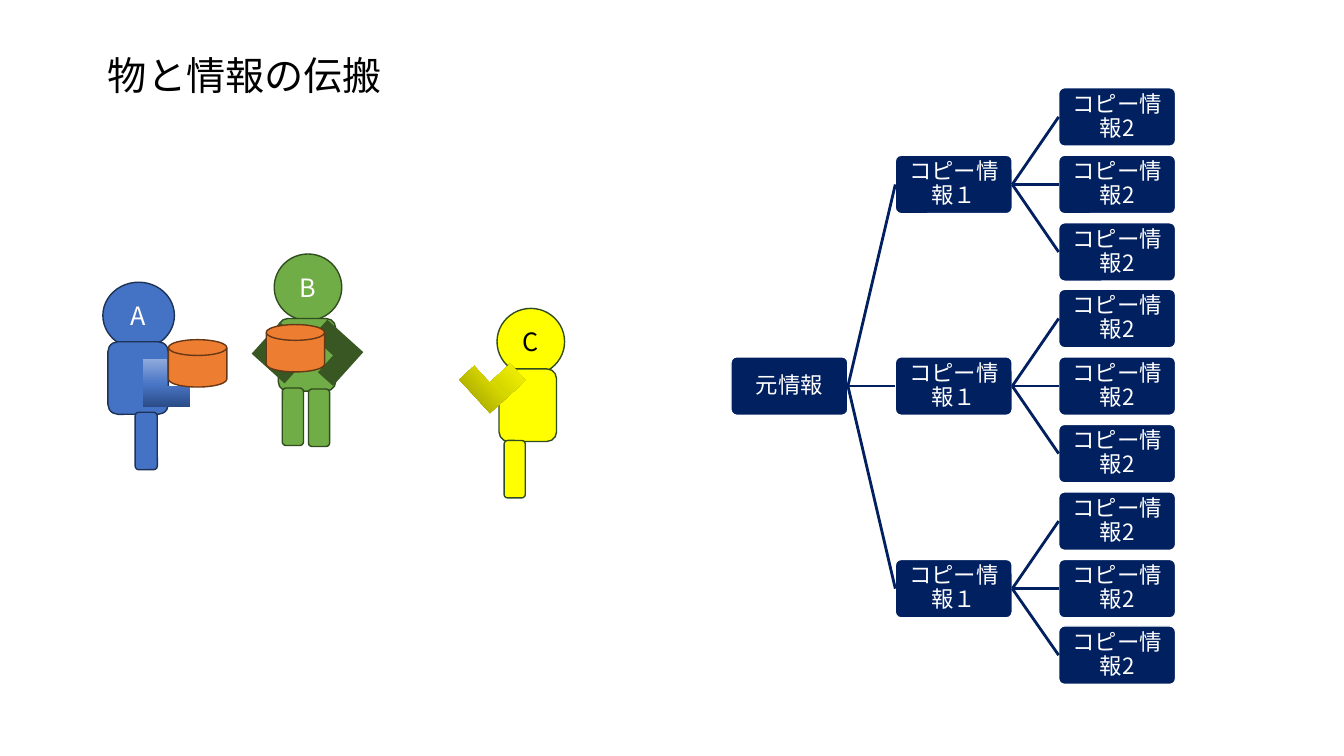
from dataclasses import dataclass

import lxml.etree
import pptx
import pptx.dml.color
import pptx.enum.shapes
import pptx.enum.text
import pptx.oxml
import pptx.oxml.ns
import pptx.shapes.autoshape
import pptx.slide
import pptx.text.text
import pptx.util

PX = 9144  # EMU per px, 100 px to the inch
FONT = "Noto Sans CJK JP"
COLORS = {
    "white": "FFFFFF", "black": "000000", "navy": "002060",
    "blue": "4472C4", "blue_edge": "1E3256",
    "green": "70AD47", "green_edge": "314C1F", "green_arm": "385723",
    "yellow": "FFFF00", "orange": "ED7D31", "orange_edge": "683715",
}
GRADIENTS = {
    "blue_arm": ((0, "2A4B86"), (48, "4A76C6"), (100, "8FAADC")),
    "yellow_arm": ((0, "979700"), (50, "D7D700"), (100, "FFFF00")),
}
KIND = pptx.enum.shapes.MSO_SHAPE
ALIGN = pptx.enum.text.PP_ALIGN
ANCHOR = pptx.enum.text.MSO_ANCHOR
Shape = pptx.shapes.autoshape.Shape


@dataclass(frozen=True)
class Part:
    kind: KIND
    box: tuple[int, int, int, int]
    fill: str
    edge: str = ""
    label: str = ""
    ink: str = "white"
    adjust: float | None = None
    turn: float = 0
    flip: str = ""


@dataclass(frozen=True)
class Level:
    label: str
    left: int
    count: int


def head(box: tuple[int, int, int, int], fill: str, edge: str, label: str, ink: str = "white") -> Part:
    return Part(KIND.OVAL, box, fill, edge, label, ink)


def limb(box: tuple[int, int, int, int], fill: str, edge: str) -> Part:
    return Part(KIND.ROUNDED_RECTANGLE, box, fill, edge)


def arm(box: tuple[int, int, int, int], fill: str, turn: float = 0, flip: str = "") -> Part:
    return Part(KIND.CORNER, box, fill, adjust=0.446, turn=turn, flip=flip)


def cargo(left: int, top: int) -> Part:
    return Part(KIND.FLOWCHART_MAGNETIC_DISK, (left, top, 58, 47), "orange", "orange_edge")


PEOPLE_AND_CARGO = (
    # Person B
    head((272, 252, 67, 66), "green", "green_edge", "B"),
    limb((276, 316, 57, 72), "green", "green_edge"),
    arm((305, 326, 45, 48), "green_arm", 312, "flipH"),
    limb((280, 385, 21, 57), "green", "green_edge"),
    arm((259, 328, 42, 44), "green_arm", 312, "flipV"),
    limb((306, 386, 21, 57), "green", "green_edge"),
    # Person A
    head((102, 280, 71, 66), "blue", "blue_edge", "A"),
    limb((107, 339, 60, 72), "blue", "blue_edge"),
    arm((142, 356, 47, 48), "blue_arm"),
    limb((134, 409, 22, 57), "blue", "blue_edge"),
    cargo(167, 337),
    # Person C
    head((493, 306, 67, 66), "yellow", "green_edge", "C", "black"),
    limb((495, 366, 57, 72), "yellow", "green_edge"),
    arm((466, 353, 45, 48), "yellow_arm", 47.5, "flipH"),
    limb((500, 437, 21, 57), "yellow", "green_edge"),
    cargo(264, 322),
)

LEVELS = (Level("元情報", 725, 1), Level("コピー情報１", 888, 3), Level("コピー情報2", 1050, 9))
LEAF_TOP, LEAF_PITCH = 87, 66.8
NODE_WIDTH, NODE_HEIGHT = 116, 58


def rgb(color: str) -> pptx.dml.color.RGBColor:
    return pptx.dml.color.RGBColor.from_string(COLORS[color])


def write(frame: pptx.text.text.TextFrame, text: str, size: int, color: str, align: ALIGN) -> None:
    frame.text = text
    frame.word_wrap = True
    paragraph = frame.paragraphs[0]
    paragraph.alignment = align
    for run in paragraph.runs:
        run.font.size = pptx.util.Pt(size)
        run.font.color.rgb = rgb(color)
        run.font.name = FONT
        east_asian = lxml.etree.SubElement(run.font._element, pptx.oxml.ns.qn("a:ea"))
        east_asian.set("typeface", FONT)


def fill_gradient(shape: Shape, stops: tuple[tuple[int, str], ...]) -> None:
    stop_xml = "".join(
        f'<a:gs pos="{place * 1000}"><a:srgbClr val="{color}"/></a:gs>' for place, color in stops
    )
    gradient = pptx.oxml.parse_xml(
        f'<a:gradFill {pptx.oxml.ns.nsdecls("a")} rotWithShape="1"><a:gsLst>{stop_xml}</a:gsLst>'
        '<a:lin ang="16200000" scaled="1"/></a:gradFill>'
    )
    shape._element.spPr.find(pptx.oxml.ns.qn("a:prstGeom")).addnext(gradient)


def draw_part(slide: pptx.slide.Slide, part: Part) -> Shape:
    shape = slide.shapes.add_shape(part.kind, *(value * PX for value in part.box))
    shape.shadow.inherit = False
    if part.adjust is not None:
        shape.adjustments[0] = part.adjust
    if part.fill in GRADIENTS:
        fill_gradient(shape, GRADIENTS[part.fill])
    else:
        shape.fill.solid()
        shape.fill.fore_color.rgb = rgb(part.fill)
    if part.edge:
        shape.line.color.rgb = rgb(part.edge)
        shape.line.width = pptx.util.Pt(1)
    else:
        shape.line.fill.background()
    shape.rotation = part.turn
    if part.flip:
        shape._element.spPr.xfrm.set(part.flip, "1")
    if part.label:
        shape.text_frame.vertical_anchor = ANCHOR.MIDDLE
        write(shape.text_frame, part.label, 18, part.ink, ALIGN.CENTER)
    return shape


def draw_node(slide: pptx.slide.Slide, level: Level, top: int) -> Shape:
    box = (level.left, top, NODE_WIDTH, NODE_HEIGHT)
    node = draw_part(slide, Part(KIND.ROUNDED_RECTANGLE, box, "navy", "white", adjust=0.1))
    frame = node.text_frame
    frame.margin_left = frame.margin_right = frame.margin_top = frame.margin_bottom = 3 * PX
    frame.vertical_anchor = ANCHOR.MIDDLE
    write(frame, level.label, 16, "white", ALIGN.CENTER)
    frame.paragraphs[0].line_spacing = 0.9
    return node


def join(slide: pptx.slide.Slide, parent: Shape, child: Shape) -> None:
    branch = slide.shapes.add_connector(pptx.enum.shapes.MSO_CONNECTOR.STRAIGHT, 0, 0, 0, 0)
    branch.begin_connect(parent, 3)
    branch.end_connect(child, 1)
    branch.line.color.rgb = rgb("navy")
    branch.line.width = pptx.util.Pt(2)
    lxml.etree.SubElement(branch._element.spPr, pptx.oxml.ns.qn("a:effectLst"))


def draw_tree(slide: pptx.slide.Slide) -> None:
    parents: list[Shape] = []
    for level in LEVELS:
        leaves_each = LEVELS[-1].count // level.count
        nodes: list[Shape] = []
        for index in range(level.count):
            row = index * leaves_each + leaves_each // 2
            node = draw_node(slide, level, round(LEAF_TOP + row * LEAF_PITCH))
            if parents:
                join(slide, parents[index * len(parents) // level.count], node)
            nodes.append(node)
        parents = nodes


def main() -> None:
    deck = pptx.Presentation()
    deck.slide_width, deck.slide_height = 1333 * PX, 750 * PX
    slide = deck.slides.add_slide(deck.slide_layouts[5])

    # Heading
    heading = slide.shapes.title
    heading.left, heading.top, heading.width, heading.height = (v * PX for v in (97, 46, 877, 57))
    heading.text_frame.vertical_anchor = ANCHOR.TOP
    write(heading.text_frame, "物と情報の伝搬", 28, "black", ALIGN.LEFT)
    heading.text_frame.auto_size = pptx.enum.text.MSO_AUTO_SIZE.SHAPE_TO_FIT_TEXT

    # People handing over goods
    for part in PEOPLE_AND_CARGO:
        draw_part(slide, part)

    # Information spreading by copying
    draw_tree(slide)
    deck.save("out.pptx")


if __name__ == "__main__":
    main()
